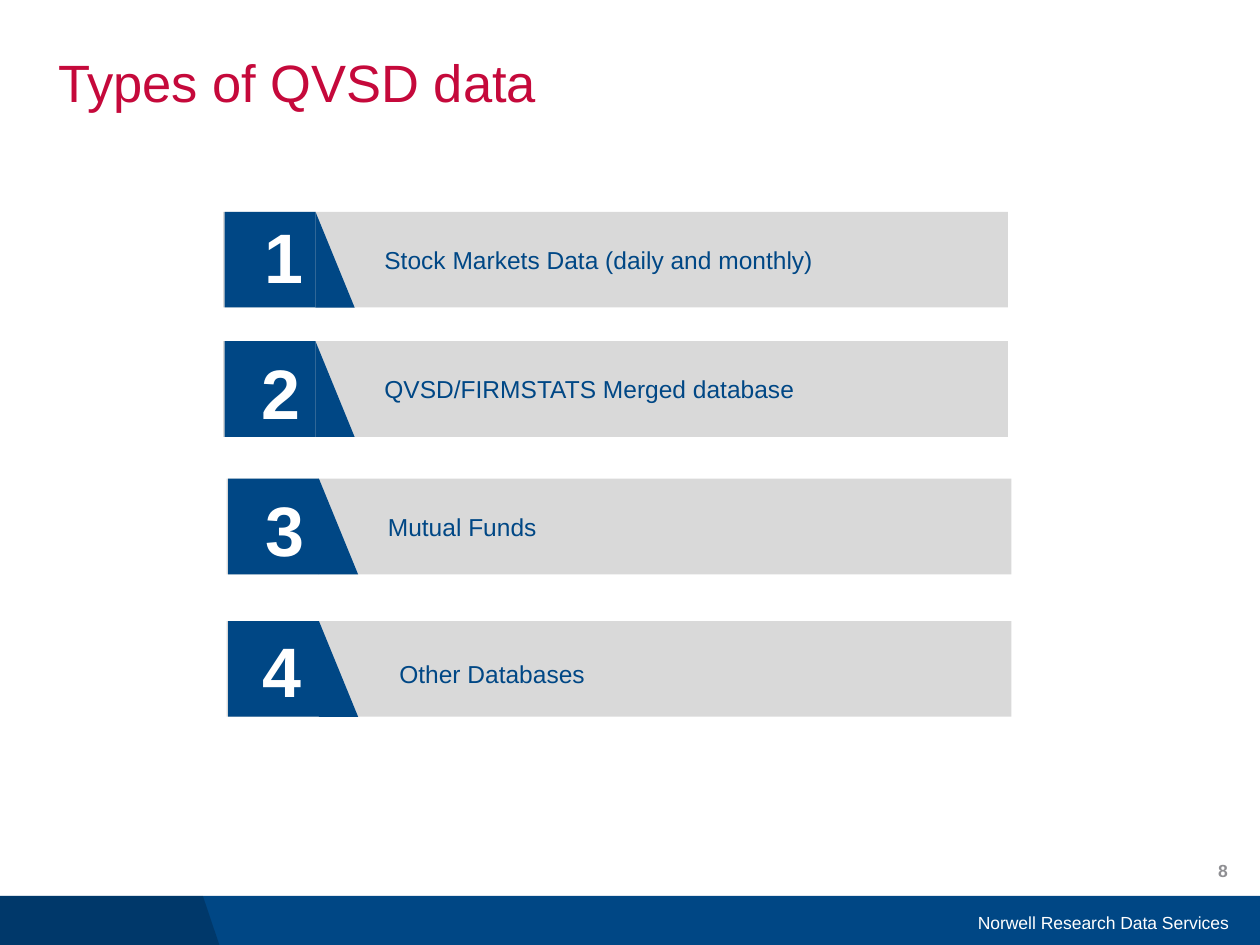
import pptx
import pptx.dml.color
import pptx.enum.shapes
import pptx.enum.text
import pptx.util
from lxml import etree
from pptx.util import Cm

BLUE, GREY, WHITE, RED, NUMBER_GREY = "004785", "D9D9D9", "FFFFFF", "C5093B", "8F8F93"
BAR_WIDTH, BAR_HEIGHT = 15.82, 1.93
BADGE_WIDTH, SLANT_WIDTH = 1.83, 0.79
SHAPES = pptx.enum.shapes.MSO_SHAPE
ANCHOR = pptx.enum.text.MSO_ANCHOR
ALIGN = pptx.enum.text.PP_ALIGN

# number, label, bar left and top, number offset, label offset (cm)
ROWS = [
    ("1", "Stock Markets Data (daily and monthly)", 4.5, 4.27, (0.58, -0.1), (3, 0.54)),
    ("2", "QVSD/FIRMSTATS Merged database", 4.5, 6.88, (0.53, 0.05), (3, 0.54)),
    ("3", "Mutual Funds", 4.57, 9.65, (0.53, 0.03), (3, 0.54)),
    ("4", "Other Databases", 4.57, 12.52, (0.48, 0), (3.23, 0.64)),
]


def color(hex_string):
    return pptx.dml.color.RGBColor.from_string(hex_string)


def paint(shape, fill):
    shape.shadow.inherit = False
    shape.fill.solid()
    shape.fill.fore_color.rgb = color(fill)
    shape.line.fill.background()


def add_block(shapes, kind, left, top, width, height, fill):
    shape = shapes.add_shape(kind, Cm(left), Cm(top), Cm(width), Cm(height))
    paint(shape, fill)
    return shape


def write(shape, text, size, text_color, bold=False, align=ALIGN.LEFT, anchor=ANCHOR.TOP):
    frame = shape.text_frame
    frame.word_wrap = True
    frame.vertical_anchor = anchor
    frame.text = text
    paragraph = frame.paragraphs[0]
    paragraph.alignment = align
    paragraph.font.name = "Arial"
    paragraph.font.size = pptx.util.Pt(size)
    paragraph.font.bold = bold
    paragraph.font.color.rgb = color(text_color)
    return paragraph


def add_text(shapes, left, top, width, height, *args, **options):
    box = shapes.add_textbox(Cm(left), Cm(top), Cm(width), Cm(height))
    write(box, *args, **options)


def add_title(slide, text):
    title = slide.shapes.title
    title.left, title.top, title.width, title.height = Cm(1.17), Cm(1.02), Cm(21.9), Cm(1.42)
    title.text_frame.margin_left = title.text_frame.margin_right = 0
    write(title, text, 30, RED).line_spacing = 0.9


def add_footer(slide):
    top, height = 18.06, 1.07
    add_block(slide.shapes, SHAPES.RECTANGLE, 0, top, 25.4, height, BLUE)

    # Darker slanted corner
    builder = slide.shapes.build_freeform(0, Cm(top))
    builder.add_line_segments(
        [(Cm(4.09), Cm(top)), (Cm(4.45), Cm(top + height)), (0, Cm(top + height))], close=True)
    corner = builder.convert_to_shape()
    paint(corner, "000000")
    fill_color = corner.fill._xPr.solidFill[0]
    etree.SubElement(fill_color, pptx.oxml.ns.qn("a:alpha"), val="20000")

    add_text(slide.shapes, 16.43, 18.08, 8.59, 1.02, "Norwell Research Data Services",
             10, WHITE, align=ALIGN.RIGHT, anchor=ANCHOR.MIDDLE)
    add_text(slide.shapes, 19.28, 17.04, 5.72, 1.02, "8",
             10, NUMBER_GREY, bold=True, align=ALIGN.RIGHT, anchor=ANCHOR.MIDDLE)


def add_row(slide, number, label, left, top, number_offset, label_offset):
    shapes = slide.shapes.add_group_shape().shapes
    badge_left = left + 0.03
    add_block(shapes, SHAPES.RECTANGLE, left, top, BAR_WIDTH, BAR_HEIGHT, GREY)
    add_block(shapes, SHAPES.RECTANGLE, badge_left, top, BADGE_WIDTH, BAR_HEIGHT, BLUE)
    slant = add_block(shapes, SHAPES.ISOSCELES_TRIANGLE, badge_left + BADGE_WIDTH, top,
                      SLANT_WIDTH, BAR_HEIGHT, BLUE)
    slant.adjustments[0] = 0
    add_text(shapes, left + number_offset[0], top + number_offset[1], 1.35, 1.96,
             number, 40, WHITE, bold=True)
    add_text(shapes, left + label_offset[0], top + label_offset[1], 12.42, 0.86,
             label, 14, BLUE)


def main():
    presentation = pptx.Presentation()
    presentation.slide_width, presentation.slide_height = Cm(25.4), Cm(19.05)
    slide = presentation.slides.add_slide(presentation.slide_layouts[5])  # title only
    add_footer(slide)
    add_title(slide, "Types of QVSD data")
    for row in ROWS:
        add_row(slide, *row)
    presentation.save("out.pptx")


if __name__ == "__main__":
    main()
